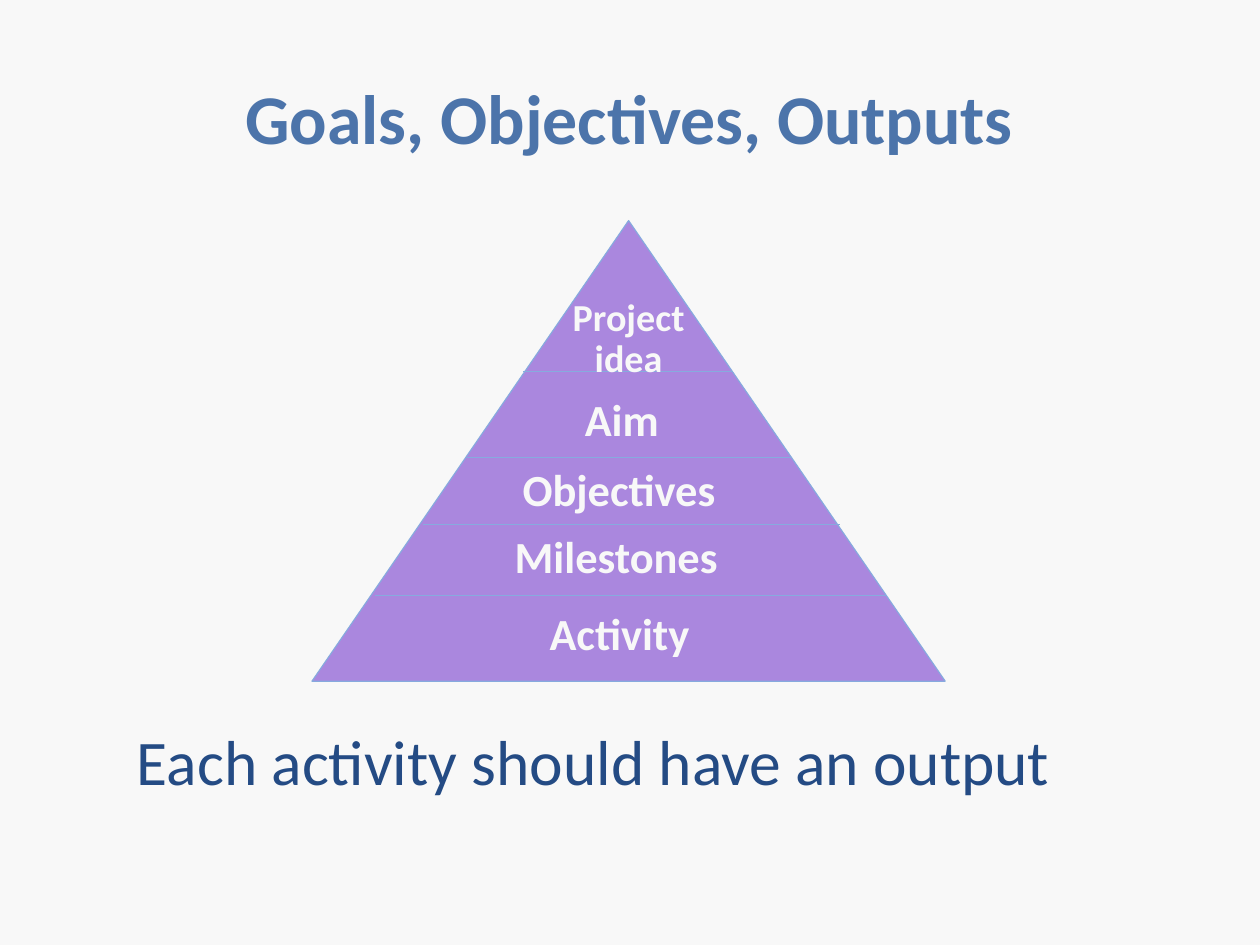
from lxml import etree
from pptx import Presentation
from pptx import util as u
from pptx.dml.color import RGBColor
from pptx.enum import shapes, text
from pptx.oxml.ns import qn

COLORS = {
    "background": "F8F8F8",
    "title": "4C74AA",
    "pyramid": "AA87DE",
    "edge": "87AADE",
    "level": "F8F8F8",
    "conclusion": "244B84",
}


def color(name):
    return RGBColor.from_string(COLORS[name])


def add_label(wording, box, ink, font_format, paragraph_format, frame_format):
    label = slide.shapes.add_textbox(*map(u.Inches, box))
    frame = label.text_frame
    paragraph = frame.paragraphs[0]
    paragraph.text = wording
    paragraph.font.color.rgb = color(ink)
    for target, values in (
        (frame, {"word_wrap": True, **frame_format}),
        (paragraph, paragraph_format),
        (paragraph.font, {"name": "Calibri", **font_format}),
    ):
        for attribute, value in values.items():
            setattr(target, attribute, value)


deck = Presentation()
deck.slide_width = u.Inches(28 / 2.54)
deck.slide_height = u.Inches(21 / 2.54)
slide = deck.slides.add_slide(deck.slide_layouts[6])
slide.background.fill.solid()
slide.background.fill.fore_color.rgb = color("background")

centered = {"alignment": text.PP_ALIGN.CENTER}
title_frame = {
    "vertical_anchor": text.MSO_ANCHOR.MIDDLE,
    "margin_left": 0,
    "margin_top": 0,
    "margin_right": 0,
    "margin_bottom": 0,
}
add_label("Goals, Objectives, Outputs", (0.55, 0.33, 9.92, 1.38), "title",
          {"size": u.Pt(44), "bold": True}, centered, title_frame)

pyramid = slide.shapes.add_shape(
    shapes.MSO_SHAPE.ISOSCELES_TRIANGLE,
    *map(u.Inches, (2.73, 1.93, 5.54, 4.03)))
pyramid.shadow.inherit = False
pyramid.fill.solid()
pyramid.fill.fore_color.rgb = color("pyramid")
pyramid.line.color.rgb = color("edge")
pyramid.line.width = u.Pt(0.75)

for left, right, height in (
    (4.58, 6.41, 3.25),
    (4.09, 6.93, 4.0),
    (3.7, 7.35, 4.59),
    (3.28, 7.75, 5.21),
):
    divider = slide.shapes.add_connector(
        shapes.MSO_CONNECTOR.STRAIGHT,
        *map(u.Inches, (left, height, right, height)))
    divider.line.color.rgb = color("edge")
    divider.line.width = u.Pt(0.75)
    etree.SubElement(divider.element.spPr, qn("a:effectLst"))

for level, size, box, wrap in (
    ("Project\nidea", 24, (4.43, 2.56, 2.14, 0.83), True),
    ("Aim", 28, (4.53, 3.43, 1.82, 0.58), True),
    ("Objectives", 28, (4.08, 4.05, 2.67, 0.58), True),
    ("Milestones", 28, (4.3, 4.63, 2.18, 0.58), False),
    ("Activity", 28, (3.66, 5.31, 3.52, 0.58), True),
):
    add_label(level, box, "level", {"size": u.Pt(size), "bold": True},
              {**centered, "line_spacing": 0.9}, {"word_wrap": wrap})

add_label("Each activity should have an output", (1.1, 6.27, 8.58, 0.77),
          "conclusion", {"size": u.Pt(40)}, {}, {})

deck.save("out.pptx")
